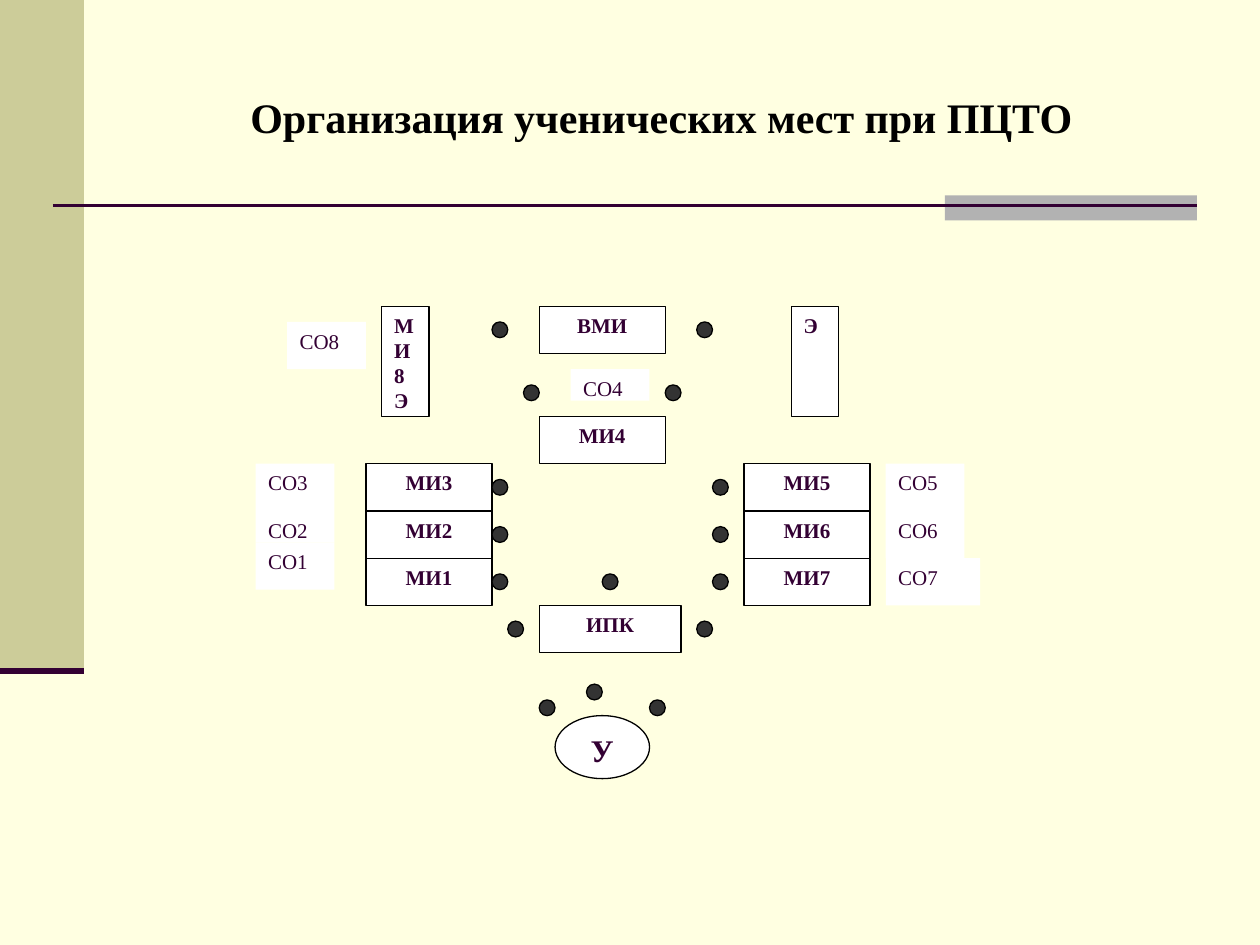
from dataclasses import dataclass

from lxml import etree
from pptx import Presentation, util as u
from pptx.dml.color import RGBColor
from pptx.enum import shapes, text
from pptx.oxml.ns import qn

WIDE, HIGH = u.Inches(10), u.Inches(7.5)
CELL = u.Inches(1) // 8               # step of the seating grid
LEFT, TOP = u.Inches(2.03), u.Inches(2.43)
RECT, OVAL = shapes.MSO_SHAPE.RECTANGLE, shapes.MSO_SHAPE.OVAL
MID = text.PP_ALIGN.CENTER
START = text.PP_ALIGN.LEFT


@dataclass(frozen=True)
class Theme:
    font: str = "Times New Roman"
    page: str = "FFFFE1"
    band: str = "CCCC99"
    bar: str = "B2B2B2"
    ink: str = "330033"
    desk: str = "FFFFFF"
    seat: str = "333333"
    black: str = "000000"
    title: int = 24
    large: int = 18
    small: int = 12
    edge: float = 0.75


LOOK = Theme()


def rgb(code):
    return RGBColor.from_string(code)


def share(x, y):
    """Turn shares of the slide into a position or a size."""
    return round(x * WIDE), round(y * HIGH)


def grid(col, row, cols, rows):
    """Turn columns and rows of the seating grid into a box."""
    return LEFT + col * CELL, TOP + row * CELL, cols * CELL, rows * CELL


def write(frame, lines, size, bold=True, align=MID, color=LOOK.ink):
    frame.word_wrap = True
    for i, line in enumerate(lines):
        par = frame.paragraphs[0] if i == 0 else frame.add_paragraph()
        par.alignment = align
        run = par.add_run()
        run.text = line
        run.font.name, run.font.size = LOOK.font, u.Pt(size)
        run.font.bold = bold
        run.font.color.rgb = rgb(color)


def block(slide, kind, box, fill, edge=False):
    item = slide.shapes.add_shape(kind, *box)
    item.shadow.inherit = False
    item.fill.solid()
    item.fill.fore_color.rgb = rgb(fill)
    if edge:
        item.line.color.rgb = rgb(LOOK.black)
        item.line.width = u.Pt(LOOK.edge)
    else:
        item.line.fill.background()
    item.text_frame.vertical_anchor = text.MSO_ANCHOR.TOP
    return item


def rule(slide, start, end, width):
    line = slide.shapes.add_connector(
        shapes.MSO_CONNECTOR.STRAIGHT, *start, *end)
    line.line.color.rgb = rgb(LOOK.ink)
    line.line.width = u.Pt(width)
    etree.SubElement(line._element.spPr, qn("a:effectLst"))


def desk(slide, lines, col, row, cols=8, rows=3, align=MID):
    item = block(slide, RECT, grid(col, row, cols, rows), LOOK.desk, True)
    write(item.text_frame, lines, LOOK.small, align=align)


def label(slide, name, col, row, cols=5, rows=3):
    item = block(slide, RECT, grid(col, row, cols, rows), LOOK.desk)
    write(item.text_frame, [name], LOOK.small, bold=False, align=START)


def seat(slide, col, row):
    block(slide, OVAL, grid(col, row, 1, 1), LOOK.seat, True)


def decor(slide):
    slide.background.fill.solid()
    slide.background.fill.fore_color.rgb = rgb(LOOK.page)
    side, foot = 1 / 15, 0.71
    block(slide, RECT, (0, 0, *share(side, foot)), LOOK.band)
    block(slide, RECT, (*share(0.75, 1.55 / 7.5), *share(0.2, 0.2 / 7.5)),
          LOOK.bar)
    level = 1.63 / 7.5
    rule(slide, share(0.042, level), share(0.95, level), 1.5)
    rule(slide, share(0, foot), share(side, foot), 3.5)


def heading(slide):
    box = slide.shapes.add_textbox(*share(0.1, 0.04), *share(0.85, 1 / 6))
    box.text_frame.vertical_anchor = text.MSO_ANCHOR.MIDDLE
    write(box.text_frame, ["Организация ученических мест при ПЦТО"],
          LOOK.title, color=LOOK.black)


def plan(slide):
    # Upright desks at the back corners
    desk(slide, ["МИ8", "Э"], 8, 0, 3, 7, START)
    desk(slide, ["Э"], 34, 0, 3, 7, START)

    # Desks on the middle axis
    desk(slide, ["ВМИ"], 18, 0)
    desk(slide, ["МИ4"], 18, 7)
    desk(slide, ["ИПК"], 18, 19, 9)

    # Side desks, three rows each, with their seats
    for i in range(3):
        row = 10 + 3 * i
        for col, num, place in ((7, 3 - i, 15), (31, 5 + i, 29)):
            desk(slide, [f"МИ{num}"], col, row)
            seat(slide, place, row + 1)

    # Labels beside the desks
    for name, *box in (
            ("СО8", 2, 1), ("СО4", 20, 4, 5, 2),
            ("СО3", 0, 10), ("СО2", 0, 13, 5, 2), ("СО1", 0, 15),
            ("СО5", 40, 10), ("СО6", 40, 13), ("СО7", 40, 16, 6)):
        label(slide, name, *box)

    # Teacher's table
    table = block(slide, OVAL, grid(19, 26, 6, 4), LOOK.desk, True)
    write(table.text_frame, ["У"], LOOK.large)

    # Seats around the middle axis
    for row, cols in ((1, (15, 28)), (5, (17, 26)), (17, (22,)),
                      (20, (16, 28)), (24, (21,)), (25, (18, 25))):
        for col in cols:
            seat(slide, col, row)


def main():
    deck = Presentation()
    deck.slide_width, deck.slide_height = WIDE, HIGH
    slide = deck.slides.add_slide(deck.slide_layouts[6])
    decor(slide)
    plan(slide)
    heading(slide)
    deck.save("out.pptx")


if __name__ == "__main__":
    main()
